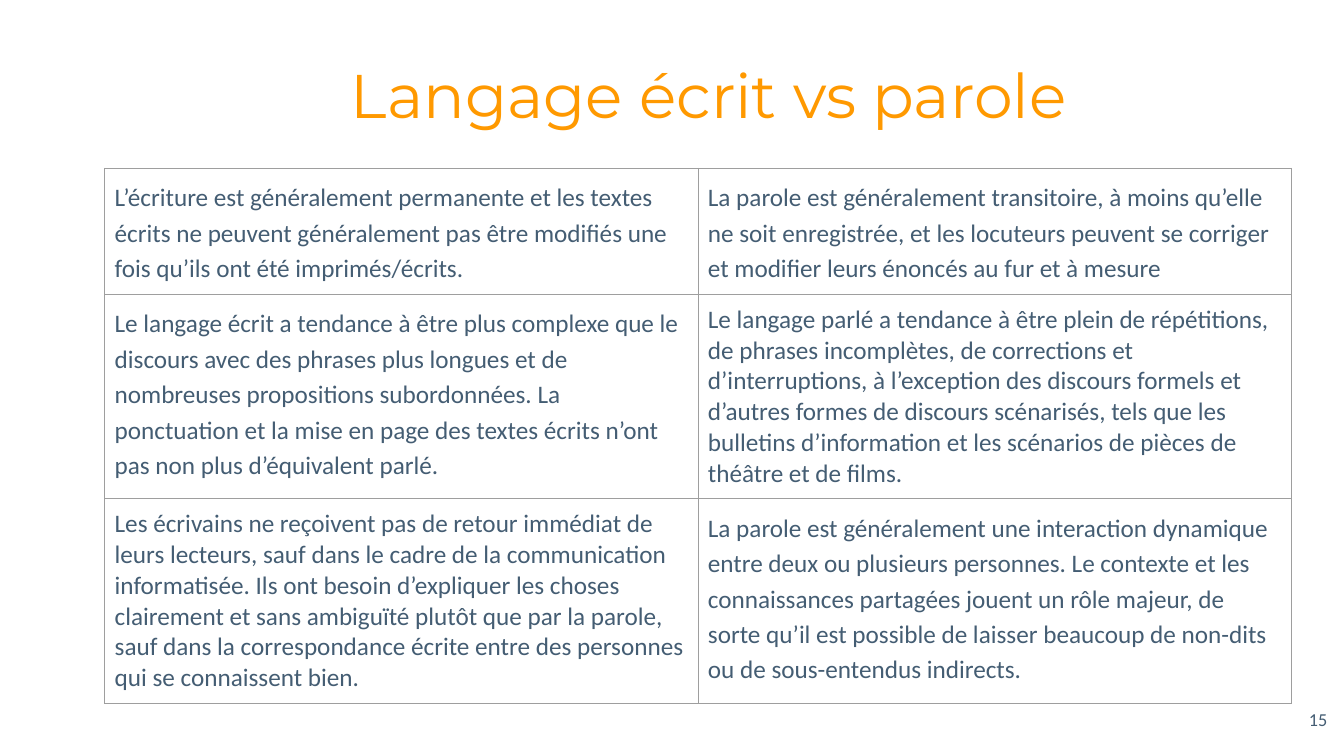
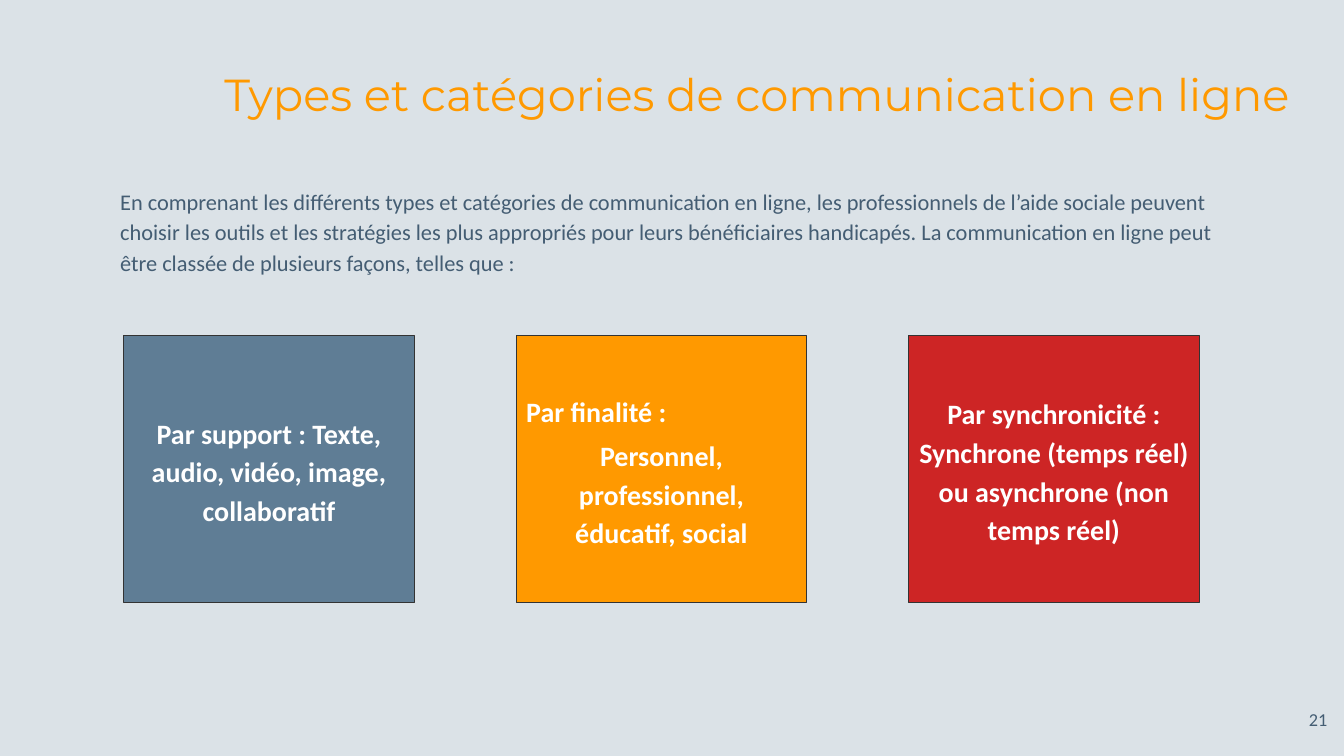
import pptx
import pptx.util
import pptx.dml.color
import pptx.enum.shapes
import pptx.enum.text
import pptx.oxml.ns
from dataclasses import dataclass
from lxml import etree

Cm, Pt = pptx.util.Cm, pptx.util.Pt
ALIGN = pptx.enum.text.PP_ALIGN
ANCHOR = pptx.enum.text.MSO_ANCHOR


@dataclass(frozen=True)
class Theme:
    head_font: str = "Montserrat"
    body_font: str = "Calibri"
    white: str = "FFFFFF"
    pale: str = "DBE2E7"
    ink: str = "445D73"
    orange: str = "FF9900"
    slate: str = "5F7D95"
    red: str = "CD2525"
    outline: str = "333333"
    grid: str = "9E9E9E"
    title: int = 44
    title_long: int = 32
    card: int = 20
    cell: int = 18
    body: int = 16
    number: int = 13
    rule: float = 0.75
    inset: float = 0.25
    inset_wide: float = 0.36
    spacing: float = 1.15


T = Theme()


def rgb(value):
    return pptx.dml.color.RGBColor.from_string(value)


# Text helpers
def write(p, text, size, color, font=T.body_font, bold=False,
          align=ALIGN.LEFT, spacing=1.0):
    p.alignment = align
    p.line_spacing = spacing
    r = p.add_run()
    r.text = text
    r.font.name = font
    r.font.size = Pt(size)
    r.font.bold = bold
    r.font.color.rgb = rgb(color)


def set_frame(tf, inset, anchor=ANCHOR.TOP):
    tf.word_wrap = True
    tf.vertical_anchor = anchor
    tf.margin_left = tf.margin_right = Cm(inset)
    tf.margin_top = tf.margin_bottom = Cm(inset)


def add_text(s, box, text, size, color, inset, anchor=ANCHOR.TOP, **style):
    tf = s.shapes.add_textbox(*map(Cm, box)).text_frame
    set_frame(tf, inset, anchor)
    write(tf.paragraphs[0], text, size, color, **style)


# Shared slide frame: background, title and page number
def new_slide(prs, background, title, size, title_width, number):
    s = prs.slides.add_slide(prs.slide_layouts[6])
    s.background.fill.solid()
    s.background.fill.fore_color.rgb = rgb(background)
    add_text(s, (4.32, 1.3, title_width, 2.11), title, size, T.orange,
             T.inset_wide, ANCHOR.MIDDLE, font=T.head_font, align=ALIGN.CENTER)
    add_text(s, (31.67, 17.6, 2.03, 1.45), number, T.number, T.ink,
             T.inset, align=ALIGN.RIGHT)
    return s


# Comparison table
def set_borders(cell):
    tcPr = cell._tc.get_or_add_tcPr()
    for side in ("lnL", "lnR", "lnT", "lnB"):
        ln = etree.SubElement(tcPr, pptx.oxml.ns.qn("a:" + side),
                              w=str(int(Pt(T.rule))))
        fill = etree.SubElement(ln, pptx.oxml.ns.qn("a:solidFill"))
        etree.SubElement(fill, pptx.oxml.ns.qn("a:srgbClr"), val=T.grid)


def add_comparison(s, box, heights, rows):
    left, top, width, height = box
    columns = len(rows[0])
    table = s.shapes.add_table(len(rows), columns, Cm(left), Cm(top),
                               Cm(width), Cm(height)).table
    table.first_row = table.horz_banding = False
    for column in table.columns:
        column.width = Cm(width / columns)
    for row, share, entries in zip(table.rows, heights, rows):
        row.height = Cm(height * share / sum(heights))
        for cell, (text, spacing) in zip(row.cells, entries):
            set_borders(cell)
            cell.fill.background()
            cell.margin_left = cell.margin_right = Cm(T.inset)
            cell.margin_top = cell.margin_bottom = Cm(T.inset)
            write(cell.text_frame.paragraphs[0], text, T.cell, T.ink,
                  spacing=spacing)


# Row of equal cards
def add_cards(s, box, card_width, cards):
    left, top, width, height = box
    step = (width - card_width) / (len(cards) - 1)
    for i, (color, lines) in enumerate(cards):
        sp = s.shapes.add_shape(pptx.enum.shapes.MSO_SHAPE.RECTANGLE,
                                Cm(left + i * step), Cm(top),
                                Cm(card_width), Cm(height))
        sp.shadow.inherit = False
        sp.fill.solid()
        sp.fill.fore_color.rgb = rgb(color)
        sp.line.color.rgb = rgb(T.outline)
        sp.line.width = Pt(T.rule)
        tf = sp.text_frame
        set_frame(tf, T.inset, ANCHOR.MIDDLE)
        for j, (text, align) in enumerate(lines):
            p = tf.add_paragraph() if j else tf.paragraphs[0]
            if j:
                p.space_before = Pt(4)
            write(p, text, T.card, T.white, bold=True, align=align,
                  spacing=T.spacing)


def writing_slide(prs):
    s = new_slide(prs, T.white, "Langage écrit vs parole", T.title, 27.1, "15")
    rows = [
        [("L’écriture est généralement permanente et les textes écrits ne "
          "peuvent généralement pas être modifiés une fois qu’ils ont été "
          "imprimés/écrits.", T.spacing),
         ("La parole est généralement transitoire, à moins qu’elle ne soit "
          "enregistrée, et les locuteurs peuvent se corriger et modifier "
          "leurs énoncés au fur et à mesure", T.spacing)],
        [("Le langage écrit a tendance à être plus complexe que le discours "
          "avec des phrases plus longues et de nombreuses propositions "
          "subordonnées. La ponctuation et la mise en page des textes écrits "
          "n’ont pas non plus d’équivalent parlé.", T.spacing),
         ("Le langage parlé a tendance à être plein de répétitions, de "
          "phrases incomplètes, de corrections et d’interruptions, à "
          "l’exception des discours formels et d’autres formes de discours "
          "scénarisés, tels que les bulletins d’information et les scénarios "
          "de pièces de théâtre et de films.", 1.0)],
        [("Les écrivains ne reçoivent pas de retour immédiat de leurs "
          "lecteurs, sauf dans le cadre de la communication informatisée. "
          "Ils ont besoin d’expliquer les choses clairement et sans ambiguïté "
          "plutôt que par la parole, sauf dans la correspondance écrite entre "
          "des personnes qui se connaissent bien.", 1.0),
         ("La parole est généralement une interaction dynamique entre deux ou "
          "plusieurs personnes. Le contexte et les connaissances partagées "
          "jouent un rôle majeur, de sorte qu’il est possible de laisser "
          "beaucoup de non-dits ou de sous-entendus indirects.", T.spacing)],
    ]
    add_comparison(s, (2.64, 4.24, 29.9, 13.48), (3.18, 5.15, 5.15), rows)


def online_slide(prs):
    s = new_slide(prs, T.pale, "Types et catégories de communication en ligne",
                  T.title_long, 29.54, "21")
    # Introduction
    add_text(s, (2.67, 4.27, 28.52, 1.93),
             "En comprenant les différents types et catégories de "
             "communication en ligne, les professionnels de l’aide sociale "
             "peuvent choisir les outils et les stratégies les plus "
             "appropriés pour leurs bénéficiaires handicapés. La "
             "communication en ligne peut être classée de plusieurs façons, "
             "telles que :", T.body, T.ink, T.inset_wide, spacing=T.spacing)
    # Categories
    add_cards(s, (3.12, 8.46, 27.1, 6.73), 7.32, [
        (T.slate, [("Par support : Texte, audio, vidéo, image, collaboratif",
                    ALIGN.CENTER)]),
        (T.orange, [("Par finalité :", ALIGN.LEFT),
                    ("Personnel, professionnel, éducatif, social",
                     ALIGN.CENTER)]),
        (T.red, [("Par synchronicité : Synchrone (temps réel) ou asynchrone "
                  "(non temps réel)", ALIGN.CENTER)]),
    ])


def main():
    prs = pptx.Presentation()
    prs.slide_width, prs.slide_height = Cm(33.87), Cm(19.05)
    writing_slide(prs)
    online_slide(prs)
    prs.save("out.pptx")


if __name__ == "__main__":
    main()
